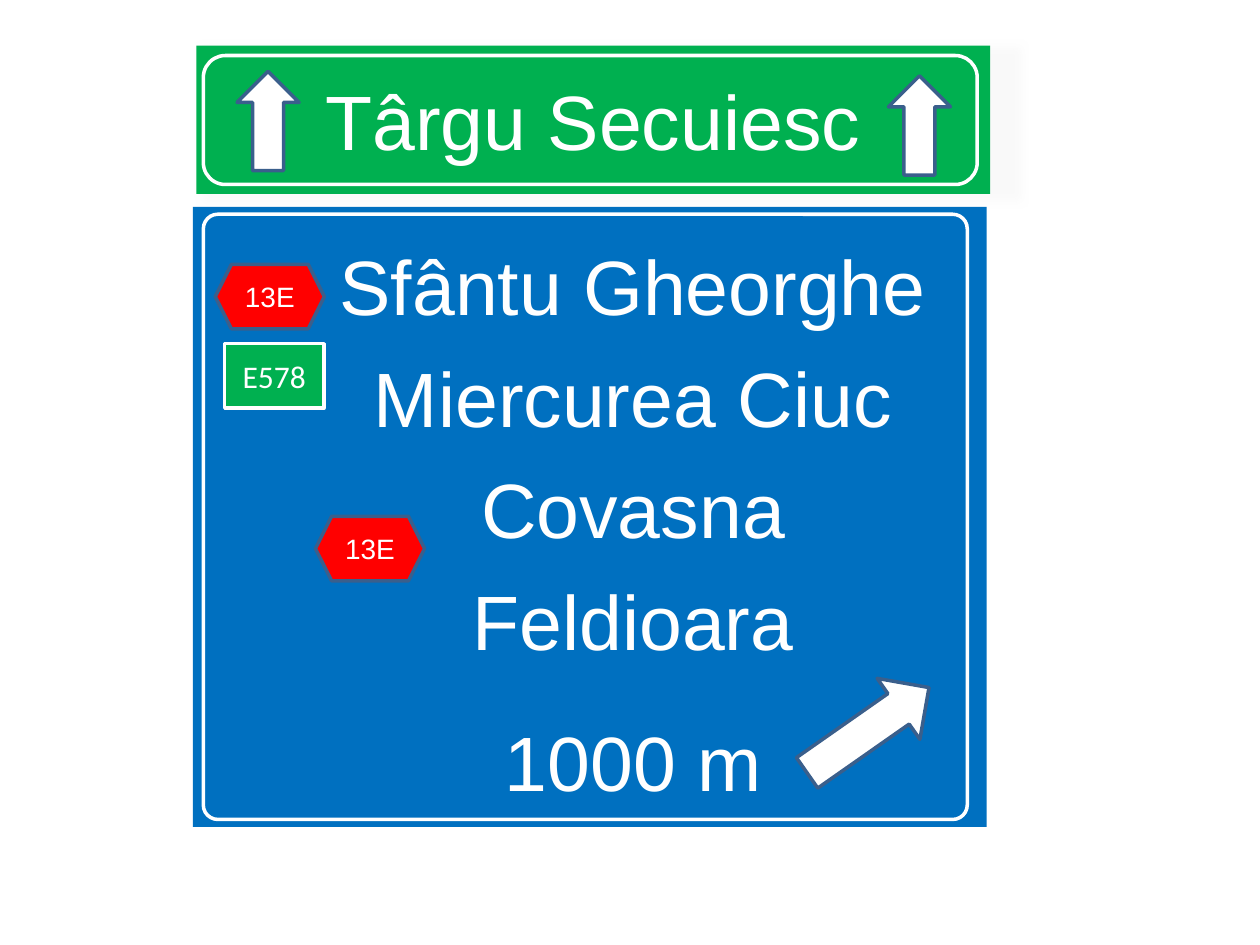
from lxml.etree import SubElement
from pptx import Presentation
from pptx.dml.color import RGBColor
from pptx.enum.shapes import MSO_SHAPE
from pptx.enum.text import MSO_ANCHOR, MSO_AUTO_SIZE, PP_ALIGN
from pptx.oxml.ns import qn
from pptx.util import Cm, Pt

WHITE = RGBColor(0xFF, 0xFF, 0xFF)
GREEN = RGBColor(0x00, 0xB0, 0x50)
BLUE = RGBColor(0x00, 0x70, 0xC0)
RED = RGBColor(0xFF, 0x00, 0x00)
STEEL = RGBColor(0x3A, 0x5F, 0x8C)

HEADING = "Târgu Secuiesc"
DESTINATIONS = ["Sfântu Gheorghe", "Miercurea Ciuc", "Covasna", "Feldioara", "1000 m"]
GAPS = [0, 11, 11, 11, 28]
TITLE_AREA = (3.96, 0.92, 16, 2.99)
BODY_AREA = (3.89, 4.17, 16, 12.5)
ARROWS = [
    (MSO_SHAPE.RIGHT_ARROW, (16, 13.97, 3, 1.5), 325),
    (MSO_SHAPE.UP_ARROW, (4.78, 1.44, 1.25, 2), 0),
    (MSO_SHAPE.UP_ARROW, (17.91, 1.53, 1.25, 2), 0),
]
BADGES = [
    (MSO_SHAPE.HEXAGON, (4.34, 5.33, 2.2, 1.3), "13E", RED, STEEL, "Arial", 16),
    (MSO_SHAPE.RECTANGLE, (4.53, 6.93, 2, 1.3), "E578", GREEN, WHITE, "Calibri", 18),
    (MSO_SHAPE.HEXAGON, (6.36, 10.41, 2.2, 1.3), "13E", RED, STEEL, "Arial", 16),
]
BORDERS = [((4.1, 1.12, 15.6, 2.6), 0.17), ((4.1, 4.32, 15.4, 12.2), 0.024)]


def write(shape, lines, font="Arial", size=44, color=WHITE, gaps=(0,),
          anchor=MSO_ANCHOR.MIDDLE):
    frame = shape.text_frame
    frame.text = "\n".join(lines)
    frame.word_wrap = True
    frame.auto_size = MSO_AUTO_SIZE.NONE
    frame.vertical_anchor = anchor
    for para, gap in zip(frame.paragraphs, gaps):
        para.alignment = PP_ALIGN.CENTER
        para.space_before = Pt(gap)
        span = para.runs[0]
        span.font.name = font
        span.font.size = Pt(size)
        span.font.color.rgb = color


def place(shape, area):
    shape.left, shape.top, shape.width, shape.height = map(Cm, area)


def paint(shape, color):
    shape.fill.solid()
    shape.fill.fore_color.rgb = color


def cast_shadow(shape, color):
    effects = SubElement(shape._element.spPr, qn("a:effectLst"))
    shadow = SubElement(effects, qn("a:outerShdw"), blurRad=str(Pt(5)),
                        sx="103000", sy="103000", algn="tl", rotWithShape="0")
    tone = SubElement(shadow, qn("a:srgbClr"), val=color)
    SubElement(tone, qn("a:alpha"), val="40000")


def add_sign_part(page, kind, area, fill=None, line=WHITE):
    shape = page.shapes.add_shape(kind, *map(Cm, area))
    shape.shadow.inherit = False
    if fill is None:
        shape.fill.background()
    else:
        paint(shape, fill)
    shape.line.color.rgb = line
    shape.line.width = Pt(2)
    return shape


def main():
    deck = Presentation()
    deck.slide_width, deck.slide_height = Cm(25.4), Cm(19.05)
    page = deck.slides.add_slide(deck.slide_layouts[0])

    title, body = page.shapes.title, page.placeholders[1]
    for panel, area, color, shade in (
        (title, TITLE_AREA, GREEN, "F2F2F2"),
        (body, BODY_AREA, BLUE, "FFFFFF"),
    ):
        place(panel, area)
        paint(panel, color)
        cast_shadow(panel, shade)
    write(title, [HEADING])
    write(body, DESTINATIONS, gaps=GAPS, anchor=MSO_ANCHOR.TOP)
    body.text_frame.margin_left = Cm(2)
    body.text_frame.margin_top = Cm(0.64)

    for kind, area, angle in ARROWS:
        arrow = add_sign_part(page, kind, area, WHITE, STEEL)
        arrow.rotation = angle
    for kind, area, text, fill, line, font, size in BADGES:
        badge = add_sign_part(page, kind, area, fill, line)
        write(badge, [text], font=font, size=size)
    for area, rounding in BORDERS:
        border = add_sign_part(page, MSO_SHAPE.ROUNDED_RECTANGLE, area)
        border.adjustments[0] = rounding

    deck.save("out.pptx")


if __name__ == "__main__":
    main()
